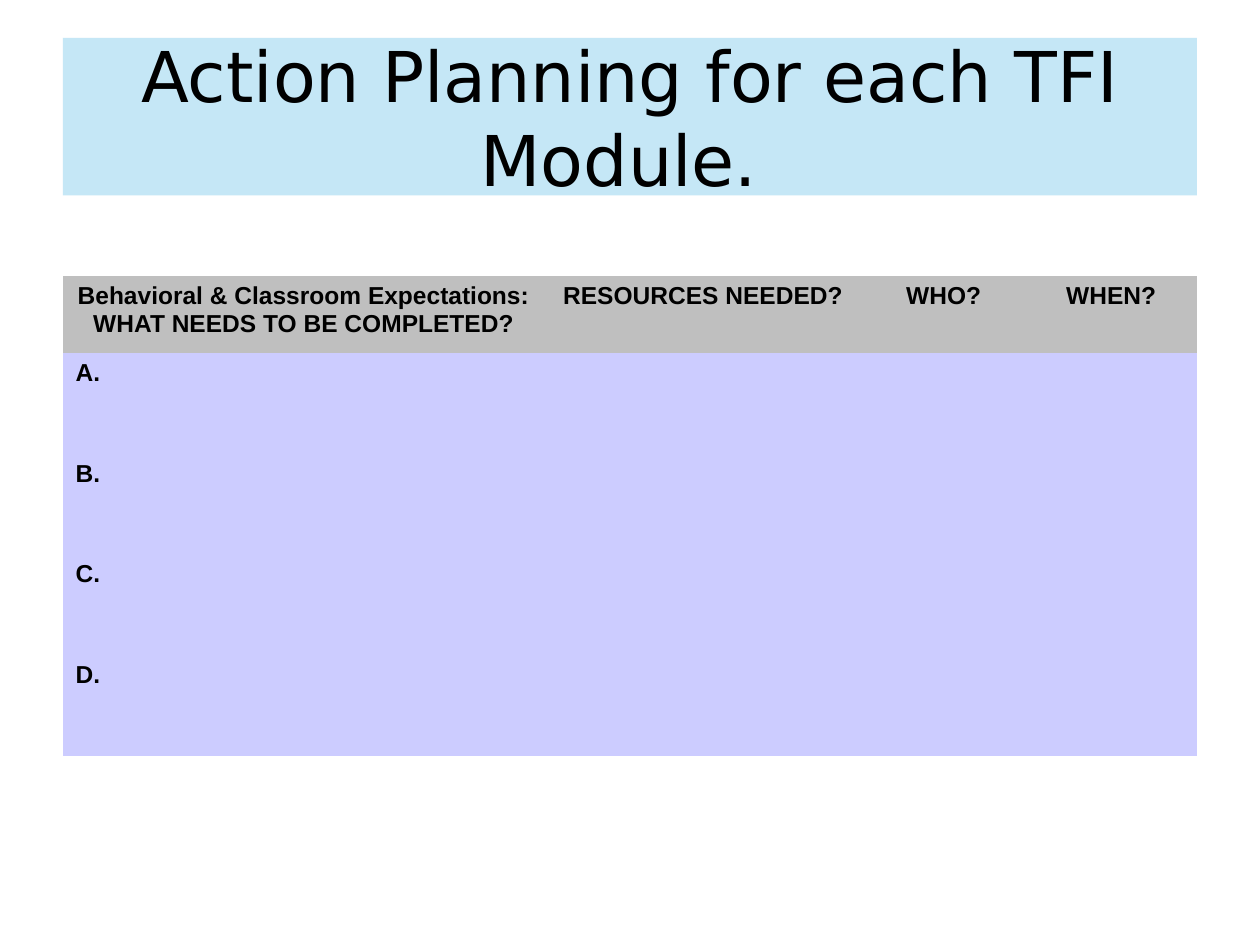
from typing import NamedTuple

from lxml import etree
from pptx import Presentation
from pptx.dml.color import RGBColor
from pptx.enum.shapes import MSO_SHAPE as Shape
from pptx.enum.text import MSO_ANCHOR as Anchor, PP_ALIGN as Align
from pptx.oxml.ns import qn
from pptx.util import Inches, Pt

NO_STYLE_NO_GRID = "{2D5ABB26-0587-4C30-8999-92F81FD0307C}"
MARGIN = 0.5
CONTENT_WIDTH = 9
HEADER_HEIGHT = 0.61
STEP_HEIGHT = 0.8
STEPS = ["A.", "B.", "C.", "D."]


class Column(NamedTuple):
    heading: str
    width: float


COLUMNS = [
    Column("Behavioral & Classroom Expectations:\nWHAT NEEDS TO BE COMPLETED?", 3.82),
    Column("RESOURCES NEEDED?", 2.52),
    Column("WHO?", 1.3),
    Column("WHEN?", 1.36),
]


def set_fill(target, color: str) -> None:
    target.fill.solid()
    target.fill.fore_color.rgb = RGBColor.from_string(color)


def write_text(frame, text: str, *, font: str = "Arial", size: float = 14,
               bold: bool = True, align: Align = Align.LEFT,
               color: str = "000000") -> None:
    """Fill a text frame, one paragraph per line of text."""
    frame.text = text
    for paragraph in frame.paragraphs:
        paragraph.alignment = align
        for run in paragraph.runs:
            run.font.name = font
            run.font.size = Pt(size)
            run.font.bold = bold
            run.font.color.rgb = RGBColor.from_string(color)


def add_title(slide, text: str) -> None:
    title = slide.shapes.add_shape(Shape.RECTANGLE, Inches(MARGIN), Inches(0.3),
                                   Inches(CONTENT_WIDTH), Inches(1.25))
    title.shadow.inherit = False
    title.line.fill.background()
    set_fill(title, "A9DCF2")
    fill_color = next(title.element.spPr.iter(qn("a:srgbClr")))
    etree.SubElement(fill_color, qn("a:alpha"), val="67000")
    title.text_frame.word_wrap = True
    title.text_frame.vertical_anchor = Anchor.MIDDLE
    write_text(title.text_frame, text, font="DejaVu Sans", size=40,
               bold=False, align=Align.CENTER)


def add_plan_table(slide) -> None:
    height = HEADER_HEIGHT + STEP_HEIGHT * len(STEPS)
    table = slide.shapes.add_table(len(STEPS) + 1, len(COLUMNS), Inches(MARGIN),
                                   Inches(2.19), Inches(CONTENT_WIDTH),
                                   Inches(height)).table
    table.first_row = table.horz_banding = False
    next(table._tbl.iter(qn("a:tableStyleId"))).text = NO_STYLE_NO_GRID

    for row in table.rows:
        row.height = Inches(STEP_HEIGHT)
        for cell in row.cells:
            set_fill(cell, "CCCCFF")
    table.rows[0].height = Inches(HEADER_HEIGHT)

    for index, column in enumerate(COLUMNS):
        table.columns[index].width = Inches(column.width)
        cell = table.cell(0, index)
        set_fill(cell, "BFBFBF")
        write_text(cell.text_frame, column.heading, align=Align.CENTER)
    for index, step in enumerate(STEPS, start=1):
        write_text(table.cell(index, 0).text_frame, step)


def main() -> None:
    presentation = Presentation()
    presentation.slide_width = Inches(10)
    presentation.slide_height = Inches(7.5)
    slide = presentation.slides.add_slide(presentation.slide_layouts[6])
    add_title(slide, "Action Planning for each TFI Module. ")
    add_plan_table(slide)
    presentation.save("out.pptx")


if __name__ == "__main__":
    main()
